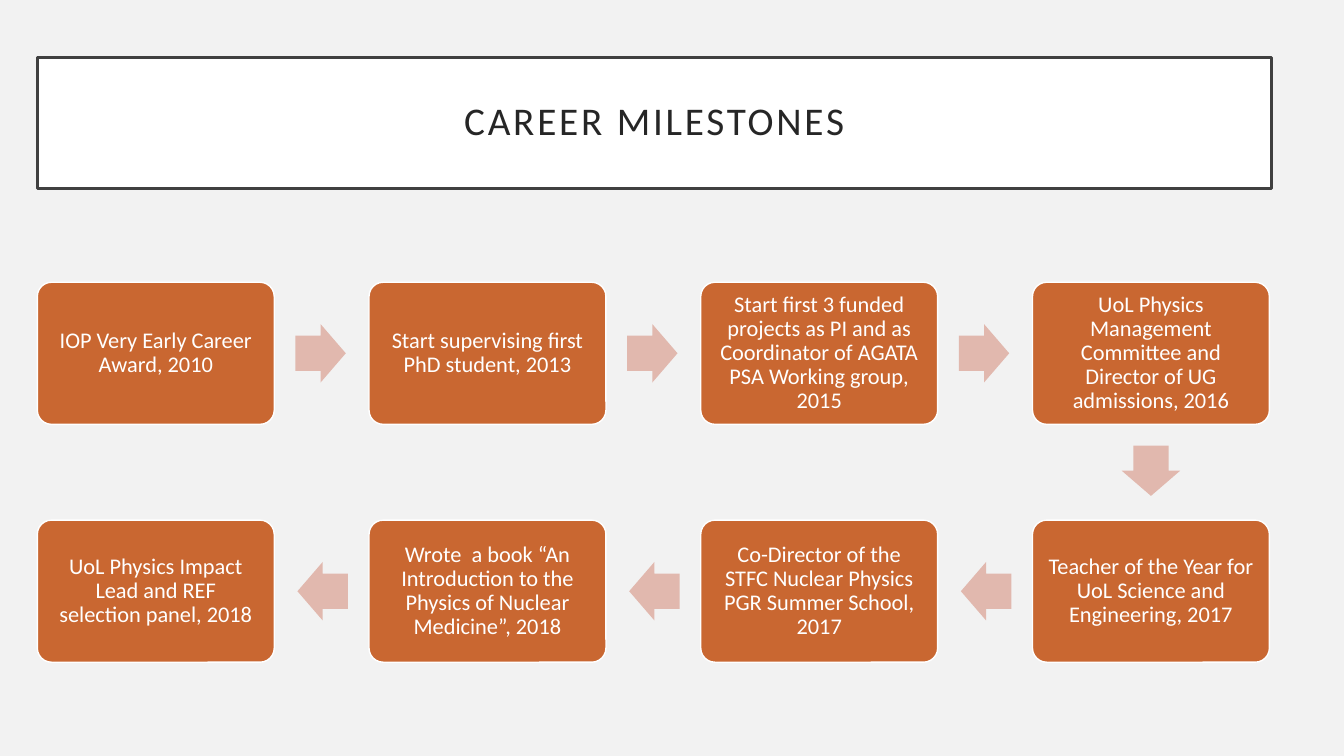
from pptx import Presentation
from pptx.dml.color import RGBColor
from pptx.enum.shapes import MSO_SHAPE
from pptx.enum.text import MSO_ANCHOR, MSO_AUTO_SIZE, PP_ALIGN
from pptx.util import Inches, Pt

COLORS = {
    "background": "F2F2F2",
    "box": "C96731",
    "arrow": "E1B8AE",
    "white": "FFFFFF",
    "title_line": "404040",
    "title_text": "262626",
}
FONT = "Calibri"
MILESTONES = [
    "IOP Very Early Career Award, 2010",
    "Start supervising first PhD student, 2013",
    "Start first 3 funded projects as PI and as Coordinator of AGATA PSA Working group, 2015",
    "UoL Physics Management Committee and Director of UG admissions, 2016",
    "Teacher of the Year for UoL Science and Engineering, 2017",
    "Co-Director of the STFC Nuclear Physics PGR Summer School, 2017",
    "Wrote  a book “An Introduction to the Physics of Nuclear Medicine”, 2018",
    "UoL Physics Impact Lead and REF selection panel, 2018",
]
COLUMNS = 4
LEFT, TOP = 0.37, 2.8
COLUMN_STEP, ROW_STEP = 3.29, 2.36
BOX_WIDTH, BOX_HEIGHT = 2.35, 1.41
ARROW_WIDTH, ARROW_HEIGHT = 0.5, 0.58


def color(name):
    """Return the named colour."""
    return RGBColor.from_string(COLORS[name])


def paint(shape, fill, line=None, line_width=1):
    """Give a shape a solid fill and an optional outline."""
    shape.fill.solid()
    shape.fill.fore_color.rgb = color(fill)
    if line:
        shape.line.color.rgb = color(line)
        shape.line.width = Pt(line_width)
    else:
        shape.line.fill.background()


def write(shape, text, size, text_color, inset):
    """Write centred text into a shape."""
    frame = shape.text_frame
    frame.text = text
    frame.word_wrap = True
    frame.auto_size = MSO_AUTO_SIZE.NONE
    frame.vertical_anchor = MSO_ANCHOR.MIDDLE
    frame.margin_left = frame.margin_right = Inches(inset)
    frame.margin_top = frame.margin_bottom = Inches(inset)
    paragraph = frame.paragraphs[0]
    paragraph.alignment = PP_ALIGN.CENTER
    paragraph.line_spacing = 0.9
    paragraph.space_before = Pt(0)
    font = paragraph.runs[0].font
    font.name = FONT
    font.size = Pt(size)
    font.color.rgb = color(text_color)


def format_title(title, text):
    """Place the title and draw its frame."""
    title.left, title.top = Inches(LEFT), Inches(0.57)
    title.width, title.height = Inches(12.24), Inches(1.3)
    paint(title, "white", "title_line", 2.5)
    write(title, text, 28, "title_text", 0.2)
    run = title.text_frame.paragraphs[0].runs[0]
    run.font._element.set("spc", "200")


def add_box(slide, left, top, text):
    """Add one rounded milestone box."""
    box = slide.shapes.add_shape(
        MSO_SHAPE.ROUNDED_RECTANGLE,
        Inches(left), Inches(top), Inches(BOX_WIDTH), Inches(BOX_HEIGHT),
    )
    box.shadow.inherit = False
    box.adjustments[0] = 0.1
    paint(box, "box", "white")
    write(box, text, 16, "white", 0.11)


def add_arrow(slide, center_x, center_y, rotation):
    """Add an arrow around a centre, turned by the rotation."""
    arrow = slide.shapes.add_shape(
        MSO_SHAPE.RIGHT_ARROW,
        Inches(center_x - ARROW_WIDTH / 2), Inches(center_y - ARROW_HEIGHT / 2),
        Inches(ARROW_WIDTH), Inches(ARROW_HEIGHT),
    )
    arrow.shadow.inherit = False
    arrow.adjustments[0] = 0.6
    arrow.adjustments[1] = 0.5
    arrow.rotation = rotation
    paint(arrow, "arrow")


def add_milestones(slide):
    """Lay the boxes out in a snake, each followed by an arrow."""
    for index, text in enumerate(MILESTONES):
        row, place = divmod(index, COLUMNS)
        backward = row % 2 == 1
        column = COLUMNS - 1 - place if backward else place
        left = LEFT + column * COLUMN_STEP
        top = TOP + row * ROW_STEP
        middle = top + BOX_HEIGHT / 2
        add_box(slide, left, top, text)
        if index == len(MILESTONES) - 1:
            continue
        if place == COLUMNS - 1:
            add_arrow(slide, left + BOX_WIDTH / 2, top + 1.87, 90)
        elif backward:
            add_arrow(slide, left - 0.46, middle, 180)
        else:
            add_arrow(slide, left + 2.81, middle, 0)


def main():
    """Build the career milestones slide."""
    presentation = Presentation()
    presentation.slide_width = Inches(13.33)
    presentation.slide_height = Inches(7.5)
    slide = presentation.slides.add_slide(presentation.slide_layouts[5])
    slide.background.fill.solid()
    slide.background.fill.fore_color.rgb = color("background")
    format_title(slide.shapes.title, "CAREER MILESTONES")
    add_milestones(slide)
    presentation.save("out.pptx")


if __name__ == "__main__":
    main()
